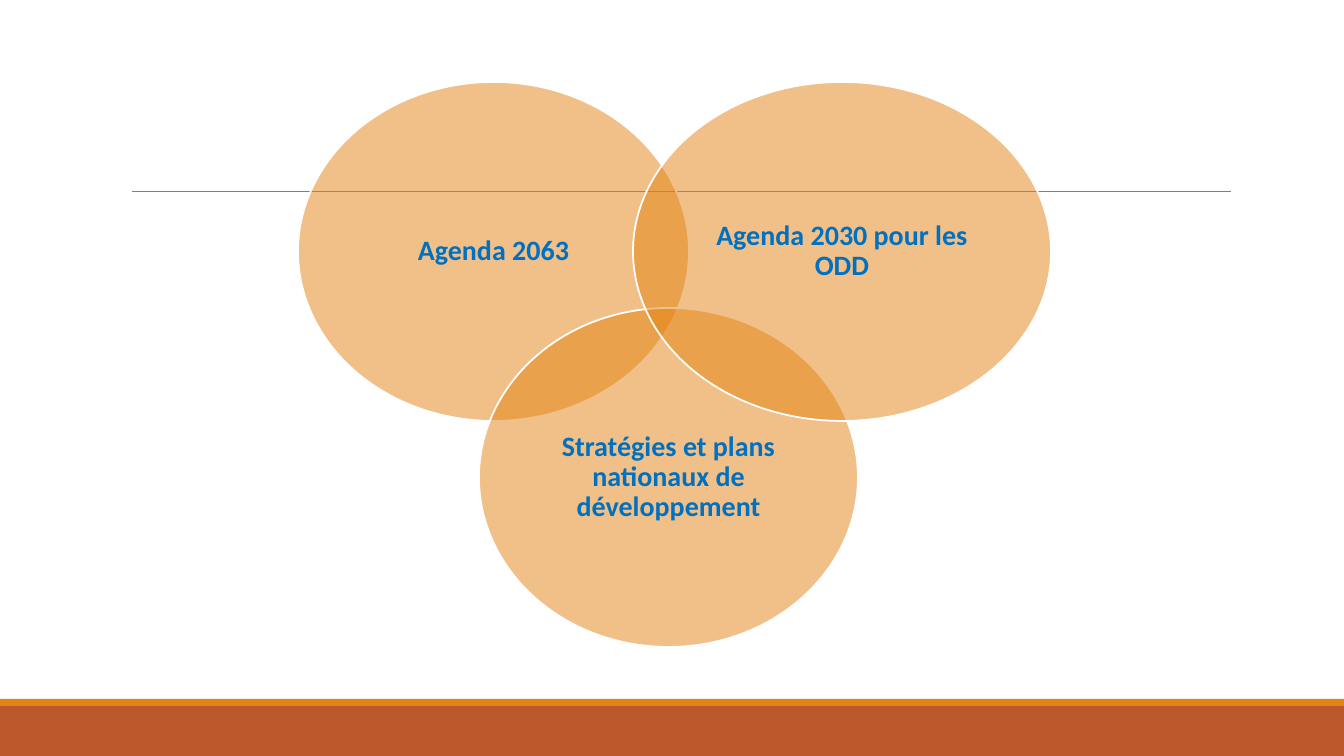
from dataclasses import dataclass
from math import sqrt

from lxml.etree import SubElement
from pptx import Presentation
from pptx.dml.color import RGBColor
from pptx.enum.shapes import MSO_CONNECTOR, MSO_SHAPE
from pptx.enum.text import MSO_ANCHOR, PP_ALIGN
from pptx.oxml.ns import qn
from pptx.util import Emu, Pt

SLIDE_SIZE = (1344, 756)
CIRCLES = [
    ("Agenda 2063", (298, 82, 391)),
    ("Stratégies et plans nationaux de développement", (479, 308, 379)),
    ("Agenda 2030 pour les ODD", (633, 82, 418)),
]
CIRCLE_HEIGHT = 339
TEXT_INSET = 8
RULE = (132, 1231, 191)
FOOTER_TOP = 706
STRIPE_HEIGHT = 7


@dataclass(frozen=True)
class Theme:
    footer: str = "BD582C"
    accent: str = "E48312"
    rule: str = "808080"
    outline: str = "FFFFFF"
    text: str = "0070C0"
    font: str = "Calibri"
    text_size: int = 20
    rule_width: float = 0.5
    outline_width: float = 1.25
    circle_opacity: int = 50


THEME = Theme()


def px(value):
    return Emu(round(value * 914400 / 100.8))


def add_filled_shape(slide, kind, box, color, opacity=100, outline=None):
    shape = slide.shapes.add_shape(kind, *map(px, box))
    shape.shadow.inherit = False
    shape.fill.solid()
    shape.fill.fore_color.rgb = RGBColor.from_string(color)
    if opacity < 100:
        color_element = shape.fill._xPr.find(qn("a:solidFill"))[0]
        SubElement(color_element, qn("a:alpha"), val=str(opacity * 1000))
    if outline:
        shape.line.color.rgb = RGBColor.from_string(outline)
        shape.line.width = Pt(THEME.outline_width)
    else:
        shape.line.fill.background()


def add_rule(slide, left, right, top):
    rule = slide.shapes.add_connector(
        MSO_CONNECTOR.STRAIGHT, px(left), px(top), px(right), px(top)
    )
    rule.line.color.rgb = RGBColor.from_string(THEME.rule)
    rule.line.width = Pt(THEME.rule_width)
    SubElement(rule._element.spPr, qn("a:effectLst"))


def add_text(slide, text, box, *, size, color, bold=False, line_spacing=1.0):
    frame = slide.shapes.add_textbox(*map(px, box)).text_frame
    frame.word_wrap = True
    frame.vertical_anchor = MSO_ANCHOR.MIDDLE
    frame.margin_left = frame.margin_right = px(TEXT_INSET)
    frame.margin_top = frame.margin_bottom = px(TEXT_INSET)
    paragraph = frame.paragraphs[0]
    paragraph.alignment = PP_ALIGN.CENTER
    paragraph.line_spacing = line_spacing
    run = paragraph.add_run()
    run.text = text
    run.font.name = THEME.font
    run.font.size = Pt(size)
    run.font.bold = bold
    run.font.color.rgb = RGBColor.from_string(color)


def inscribed_box(left, top, width, height):
    ratio = sqrt(0.5)
    margin = (1 - ratio) / 2
    return left + width * margin, top + height * margin, width * ratio, height * ratio


def main():
    presentation = Presentation()
    slide_width, slide_height = SLIDE_SIZE
    presentation.slide_width = px(slide_width)
    presentation.slide_height = px(slide_height)
    slide = presentation.slides.add_slide(presentation.slide_layouts[6])

    footer_box = (0, FOOTER_TOP, slide_width, slide_height - FOOTER_TOP)
    stripe_box = (0, FOOTER_TOP - STRIPE_HEIGHT, slide_width, STRIPE_HEIGHT)
    add_filled_shape(slide, MSO_SHAPE.RECTANGLE, footer_box, THEME.footer)
    add_filled_shape(slide, MSO_SHAPE.RECTANGLE, stripe_box, THEME.accent)
    add_rule(slide, *RULE)

    for label, (left, top, width) in CIRCLES:
        box = (left, top, width, CIRCLE_HEIGHT)
        add_filled_shape(
            slide, MSO_SHAPE.OVAL, box, THEME.accent,
            opacity=THEME.circle_opacity, outline=THEME.outline,
        )
        add_text(
            slide, label, inscribed_box(*box),
            size=THEME.text_size, color=THEME.text, bold=True, line_spacing=0.9,
        )

    presentation.save("out.pptx")


if __name__ == "__main__":
    main()
